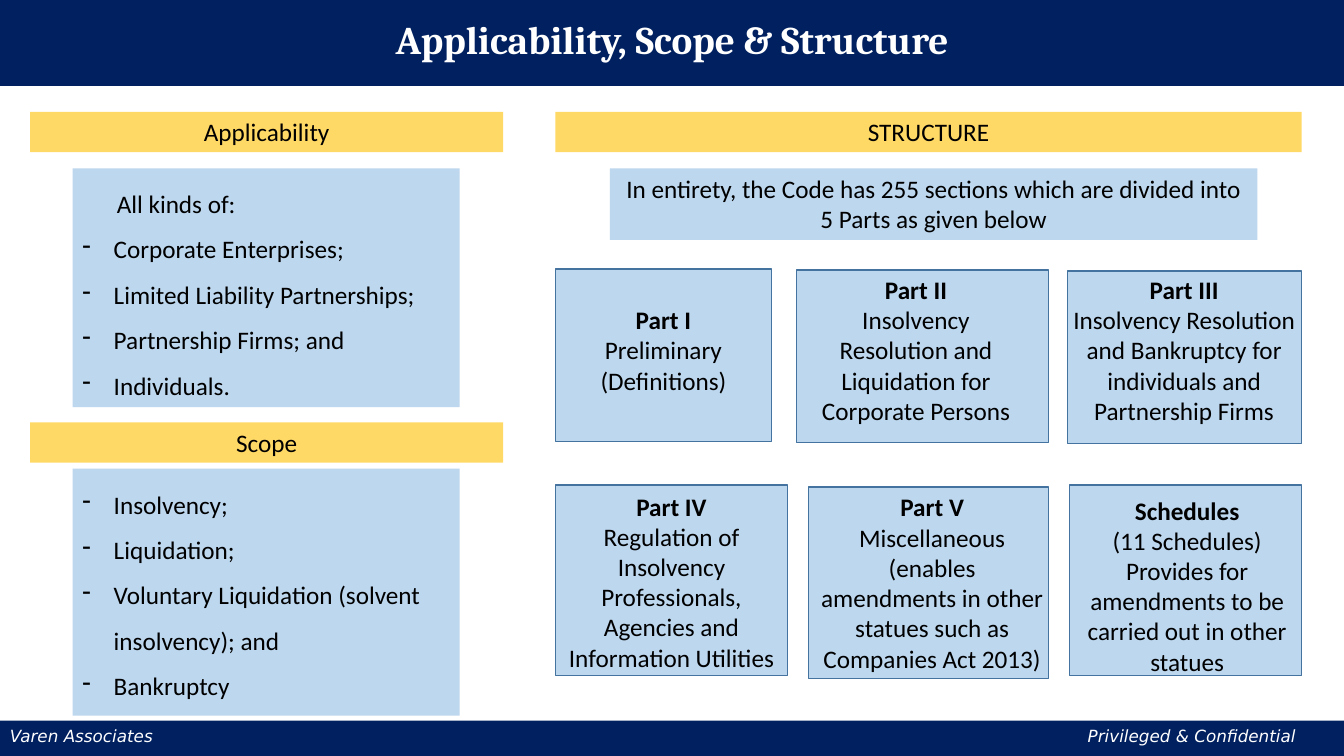
import pptx
import pptx.util
import pptx.dml.color
import pptx.enum.shapes
import pptx.enum.text
import pptx.oxml
import pptx.oxml.ns

Inches = pptx.util.Inches
Pt = pptx.util.Pt
ALIGN = pptx.enum.text.PP_ALIGN
ANCHOR = pptx.enum.text.MSO_ANCHOR
AUTO_SIZE = pptx.enum.text.MSO_AUTO_SIZE

NAVY, GOLD, PALE_BLUE, EDGE_BLUE = "002060", "FFD966", "BDD7EE", "43739E"
WHITE, BLACK = "FFFFFF", "000000"
BULLET_INDENT = 0.31

# Part cards: card box, text offset and width inside the card, paragraphs
PARTS = [
    ((5.51, 2.67, 2.14, 1.71), (0.31, 0.3, 1.52),
     ["Part I", "Preliminary", "(Definitions)"]),
    ((7.9, 2.68, 2.5, 1.71), (0, -0.01, 2.37),
     ["Part II", "Insolvency Resolution and Liquidation for Corporate Persons"]),
    ((10.59, 2.69, 2.32, 1.71), (-0.06, -0.02, 2.43),
     ["Part III", "Insolvency Resolution and Bankruptcy for individuals and Partnership Firms"]),
    ((5.51, 4.81, 2.3, 1.89), (0.01, 0.01, 2.28),
     ["Part IV", "Regulation of Insolvency Professionals, Agencies and Information Utilities"]),
    ((8.02, 4.83, 2.38, 1.9), (0, 0, 2.45),
     ["Part V", "Miscellaneous (enables amendments in other statues such as Companies Act 2013)"]),
    ((10.61, 4.81, 2.3, 1.89), (-0.03, 0.05, 2.39),
     ["Schedules", "(11 Schedules)",
      "Provides for amendments to be carried out in other statues"]),
]


def color(hex_string):
    return pptx.dml.color.RGBColor.from_string(hex_string)


def add_box(slide, box, fill, line=None):
    shape = slide.shapes.add_shape(
        pptx.enum.shapes.MSO_SHAPE.RECTANGLE, *map(Inches, box))
    shape.shadow.inherit = False
    shape.fill.solid()
    shape.fill.fore_color.rgb = color(fill)
    if line:
        shape.line.color.rgb = color(line)
        shape.line.width = Pt(1)
    else:
        shape.line.fill.background()
    return shape


def write(shape, lines, size=18, font="Calibri", font_color=BLACK,
          align=ALIGN.CENTER, anchor=ANCHOR.TOP, spacing=None, grow=True):
    frame = shape.text_frame
    frame.text = "\n".join(lines)
    frame.word_wrap = True
    frame.vertical_anchor = anchor
    frame.auto_size = AUTO_SIZE.SHAPE_TO_FIT_TEXT if grow else AUTO_SIZE.NONE
    for paragraph in frame.paragraphs:
        paragraph.alignment = align
        if spacing:
            paragraph.line_spacing = spacing
        for run in paragraph.runs:
            run.font.size = Pt(size)
            run.font.name = font
            run.font.color.rgb = color(font_color)
    return frame.paragraphs


def add_property(paragraph, xml):
    properties = paragraph._p.get_or_add_pPr()
    properties.append(pptx.oxml.parse_xml(xml % pptx.oxml.ns.nsdecls("a")))
    return properties


def add_title(slide, box):
    paragraphs = write(add_box(slide, box, NAVY, WHITE),
                       ["Applicability, Scope & Structure"], 28, "Cambria", WHITE,
                       anchor=ANCHOR.MIDDLE, spacing=0.9, grow=False)
    paragraphs[0].runs[0].font.bold = True


def add_footer(slide, box):
    paragraph = write(add_box(slide, box, NAVY),
                      ["Varen Associates\tPrivileged & Confidential"], 12,
                      "DejaVu Sans", WHITE, ALIGN.LEFT, grow=False)[0]
    tab_position = Inches(box[2] - 2.64)
    add_property(paragraph, f'<a:tabLst %s><a:tab pos="{tab_position}" algn="l"/></a:tabLst>')
    for run in paragraph.runs:
        run.font.italic = True


def add_list_section(slide, box, heading, body_top, items, intro=None):
    """Gold heading bar with a bulleted panel centred below it."""
    left, top, width, height = box
    write(add_box(slide, (left, top, width, 0.4), GOLD), [heading])
    panel = add_box(slide, (left + 0.42, body_top, width - 0.85,
                            top + height - body_top), PALE_BLUE)
    lines = ([intro] if intro else []) + items
    for paragraph in write(panel, lines, align=ALIGN.LEFT, spacing=1.5):
        is_intro = paragraph.text == intro
        properties = paragraph._p.get_or_add_pPr()
        properties.set("marL", str(Inches(0.34 if is_intro else BULLET_INDENT)))
        properties.set("indent", str(0 if is_intro else -Inches(BULLET_INDENT)))
        if not is_intro:
            add_property(paragraph, '<a:buChar %s char="-"/>')


def add_part_card(slide, box, text_place, lines):
    add_box(slide, box, PALE_BLUE, EDGE_BLUE)
    shift_x, shift_y, width = text_place
    label = slide.shapes.add_textbox(Inches(box[0] + shift_x), Inches(box[1] + shift_y),
                                     Inches(width), Inches(box[3]))
    write(label, lines)[0].runs[0].font.bold = True


def add_structure(slide, box):
    left, top, width = box
    write(add_box(slide, (left, top, width, 0.4), GOLD), ["STRUCTURE"])
    write(add_box(slide, (left + 0.54, top + 0.56, width - 0.98, 0.71), PALE_BLUE),
          ["In entirety, the Code has 255 sections which are divided into "
           "5 Parts as given below"])
    for card_box, text_place, lines in PARTS:
        add_part_card(slide, card_box, text_place, lines)


def main():
    presentation = pptx.Presentation()
    presentation.slide_width = Inches(13.33)
    presentation.slide_height = Inches(7.5)
    slide = presentation.slides.add_slide(presentation.slide_layouts[6])

    add_footer(slide, (0, 7.15, 13.33, 0.35))
    add_title(slide, (-0.01, -0.04, 13.35, 0.9))
    add_structure(slide, (5.51, 1.11, 7.4))
    add_list_section(slide, (0.3, 1.11, 4.69, 2.93), "Applicability", 1.67,
                     ["Corporate Enterprises;", "Limited Liability Partnerships;",
                      "Partnership Firms; and", "Individuals."], "All kinds of:")
    add_list_section(slide, (0.3, 4.19, 4.69, 2.91), "Scope", 4.65,
                     ["Insolvency;", "Liquidation;",
                      "Voluntary Liquidation (solvent insolvency); and", "Bankruptcy"])
    presentation.save("out.pptx")


if __name__ == "__main__":
    main()
